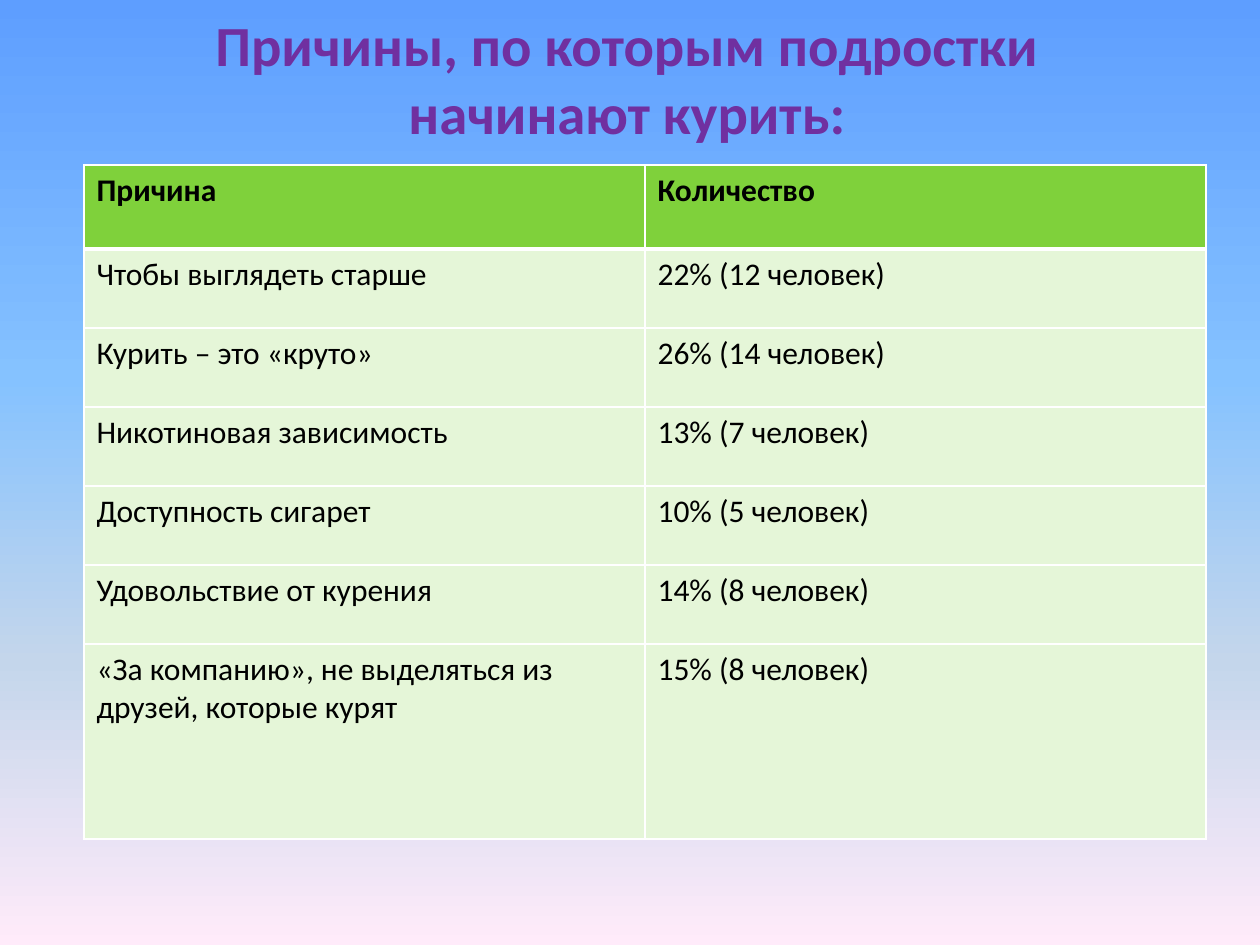
from lxml.etree import SubElement
from pptx import Presentation
from pptx.dml.color import RGBColor
from pptx.enum.text import MSO_ANCHOR, PP_ALIGN
from pptx.oxml.ns import qn
from pptx.util import Emu, Pt

EMU_PER_PX = 914400 / 126
FONT = "Calibri"
COLORS = {
    "title": "7030A0",
    "text": "000000",
    "header": "7FD13B",
    "body": "E5F6D8",
    "border": "FFFFFF",
}
BACKGROUND_STOPS = [(0, "5E9EFF"), (40, "85C2FF"), (70, "C4D6EB"), (100, "FFEBFA")]
TITLE = "Причины, по которым подростки\vначинают курить:"
ROWS = [
    ("Причина", "Количество"),
    ("Чтобы выглядеть старше", "22% (12 человек)"),
    ("Курить – это «круто»", "26% (14 человек)"),
    ("Никотиновая зависимость", "13% (7 человек)"),
    ("Доступность сигарет", "10% (5 человек)"),
    ("Удовольствие от курения", "14% (8 человек)"),
    ("«За компанию», не выделяться из друзей, которые курят", "15% (8 человек)"),
]
ROW_HEIGHTS = [84] + [79] * 5 + [195]


def px(length):
    return Emu(round(length * EMU_PER_PX))


def format_runs(paragraph, size, color, bold):
    for run in paragraph.runs:
        run.font.name = FONT
        run.font.size = Pt(size)
        run.font.bold = bold
        run.font.color.rgb = RGBColor.from_string(COLORS[color])


def fill_background(slide):
    fill = slide.background.fill
    fill.gradient()
    fill.gradient_angle = 270  # counter-clockwise, so top to bottom
    stop_list = slide.element.find(".//" + qn("a:gsLst"))
    for stop in list(stop_list):
        stop_list.remove(stop)
    for percent, color in BACKGROUND_STOPS:
        stop = SubElement(stop_list, qn("a:gs"), pos=str(percent * 1000))
        SubElement(stop, qn("a:srgbClr"), val=color)


def add_title(slide, left, top, width, height):
    text_frame = slide.shapes.add_textbox(px(left), px(top), px(width), px(height)).text_frame
    text_frame.word_wrap = True
    text_frame.vertical_anchor = MSO_ANCHOR.MIDDLE
    text_frame.margin_top = text_frame.margin_bottom = 0
    paragraph = text_frame.paragraphs[0]
    paragraph.text = TITLE
    paragraph.alignment = PP_ALIGN.CENTER
    format_runs(paragraph, 32.4, "title", True)


def set_borders(cell, widths):
    """Draw the cell's sides; widths maps L, R, T, B to points."""
    properties = cell._tc.get_or_add_tcPr()
    for index, (side, width) in enumerate(widths.items()):
        line = SubElement(properties, qn(f"a:ln{side}"), w=str(Pt(width)))
        properties.insert(index, line)  # lines come before the fill
        SubElement(SubElement(line, qn("a:solidFill")), qn("a:srgbClr"), val=COLORS["border"])


def add_reasons_table(slide, left, top, width):
    column_count = len(ROWS[0])
    table = slide.shapes.add_table(
        len(ROWS), column_count, px(left), px(top), px(width), px(sum(ROW_HEIGHTS))
    ).table
    for column in table.columns:
        column.width = px(width / column_count)
    for row_index, (texts, height) in enumerate(zip(ROWS, ROW_HEIGHTS)):
        table.rows[row_index].height = px(height)
        is_header = row_index == 0
        for column_index, text in enumerate(texts):
            cell = table.cell(row_index, column_index)
            cell.text_frame.text = text
            format_runs(cell.text_frame.paragraphs[0], 18, "text", is_header)
            cell.fill.solid()
            cell.fill.fore_color.rgb = RGBColor.from_string(
                COLORS["header" if is_header else "body"]
            )
            top_width = 3 if row_index == 1 else 1
            set_borders(cell, {"L": 1, "R": 1, "T": top_width, "B": 3 if is_header else 1})


def main():
    presentation = Presentation()
    presentation.slide_width = px(1260)
    presentation.slide_height = px(945)
    slide = presentation.slides.add_slide(presentation.slide_layouts[6])
    fill_background(slide)
    add_title(slide, 60, 10, 1134, 136)
    add_reasons_table(slide, 84, 165, 1122)
    presentation.save("out.pptx")


if __name__ == "__main__":
    main()
